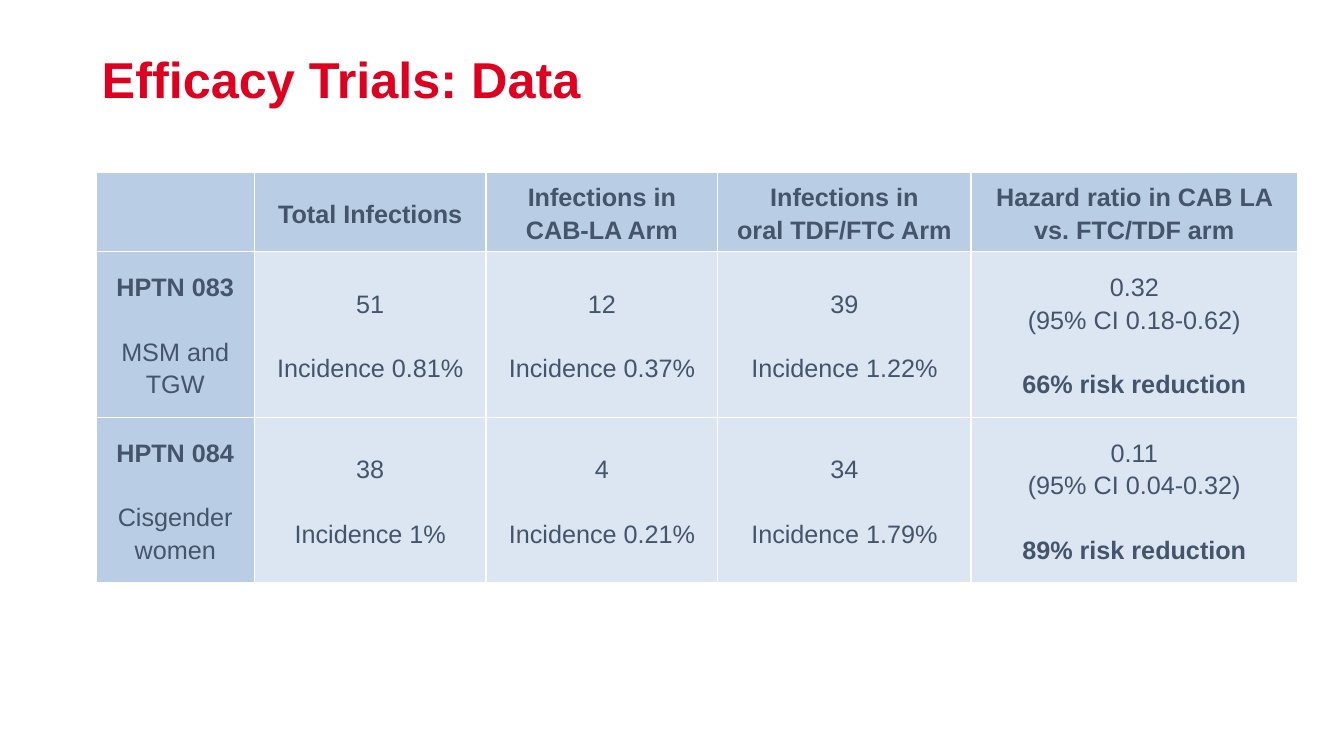
from lxml import etree
from pptx import Presentation
from pptx.dml.color import RGBColor
from pptx.enum import text
from pptx.oxml import ns
from pptx.util import Cm, Pt

COLORS = {"title": "DF0020", "text": "44546A", "label": "B9CDE5",
          "body": "DCE6F2", "border": "FFFFFF"}
COLUMN_WIDTHS = [3.99, 5.84, 5.84, 6.38, 8.23]
ROW_HEIGHTS = [1.85, 4.17, 4.17]
ROWS = [
    [[], ["Total Infections"], ["Infections in", "CAB-LA Arm"],
     ["Infections in", "oral TDF/FTC Arm"],
     ["Hazard ratio in CAB LA vs. FTC/TDF arm"]],
    [["HPTN 083", "MSM and TGW"], ["51", "Incidence 0.81%"],
     ["12", "Incidence 0.37%"], ["39", "Incidence 1.22%"],
     ["0.32", "(95% CI 0.18-0.62)", "66% risk reduction"]],
    [["HPTN 084", "Cisgender women"], ["38", "Incidence 1%"],
     ["4", "Incidence 0.21%"], ["34", "Incidence 1.79%"],
     ["0.11", "(95% CI 0.04-0.32)", "89% risk reduction"]],
]


def format_paragraph(paragraph, color, size, bold, **layout):
    font_values = {"name": "Arial", "size": Pt(size), "bold": bold}
    for target, values in ((paragraph, layout), (paragraph.font, font_values)):
        for name, value in values.items():
            setattr(target, name, value)
    paragraph.font.color.rgb = RGBColor.from_string(COLORS[color])


def add_borders(cell):
    properties = cell._tc.get_or_add_tcPr()
    for side in ("a:lnL", "a:lnR", "a:lnT", "a:lnB"):
        line = etree.SubElement(properties, ns.qn(side), w=str(Pt(1)))
        fill = etree.SubElement(line, ns.qn("a:solidFill"))
        etree.SubElement(fill, ns.qn("a:srgbClr"), val=COLORS["border"])


presentation = Presentation()
presentation.slide_width, presentation.slide_height = Cm(33.87), Cm(19.05)
slide = presentation.slides.add_slide(presentation.slide_layouts[5])
for placeholder in list(slide.placeholders):
    if placeholder != slide.shapes.title:
        placeholder.element.getparent().remove(placeholder.element)

title = slide.shapes.title
title.left, title.top, title.width, title.height = Cm(2.31), Cm(1.02), Cm(30.23), Cm(2.08)
title.text_frame.text = "Efficacy Trials: Data"
title.text_frame.vertical_anchor = text.MSO_ANCHOR.MIDDLE
format_paragraph(title.text_frame.paragraphs[0], "title", 36, True,
                 alignment=text.PP_ALIGN.LEFT, line_spacing=0.9)

table = slide.shapes.add_table(
    len(ROWS), len(COLUMN_WIDTHS), Cm(2.42), Cm(4.35),
    Cm(sum(COLUMN_WIDTHS)), Cm(sum(ROW_HEIGHTS))).table
for column, width in zip(table.columns, COLUMN_WIDTHS):
    column.width = Cm(width)
for row, height in zip(table.rows, ROW_HEIGHTS):
    row.height = Cm(height)

last_column = len(COLUMN_WIDTHS) - 1
for row_index, row in enumerate(ROWS):
    for column_index, lines in enumerate(row):
        cell = table.cell(row_index, column_index)
        add_borders(cell)
        is_label = row_index == 0 or column_index == 0
        cell.fill.solid()
        cell.fill.fore_color.rgb = RGBColor.from_string(COLORS["label" if is_label else "body"])
        cell.vertical_anchor = text.MSO_ANCHOR.MIDDLE
        for side in ("left", "right", "top", "bottom"):
            setattr(cell, f"margin_{side}", Cm(0.18))
        cell.text_frame.text = "\n".join(lines)
        for line_index, paragraph in enumerate(cell.text_frame.paragraphs):
            is_first, is_last = line_index == 0, line_index == len(lines) - 1
            bold = (row_index == 0 or (column_index == 0 and is_first)
                    or (column_index == last_column and is_last))
            has_gap = row_index > 0 and is_last
            format_paragraph(paragraph, "text", 18, bold,
                             alignment=text.PP_ALIGN.CENTER, line_spacing=1.15,
                             space_before=Pt(23 if has_gap else 0))

presentation.save("out.pptx")
